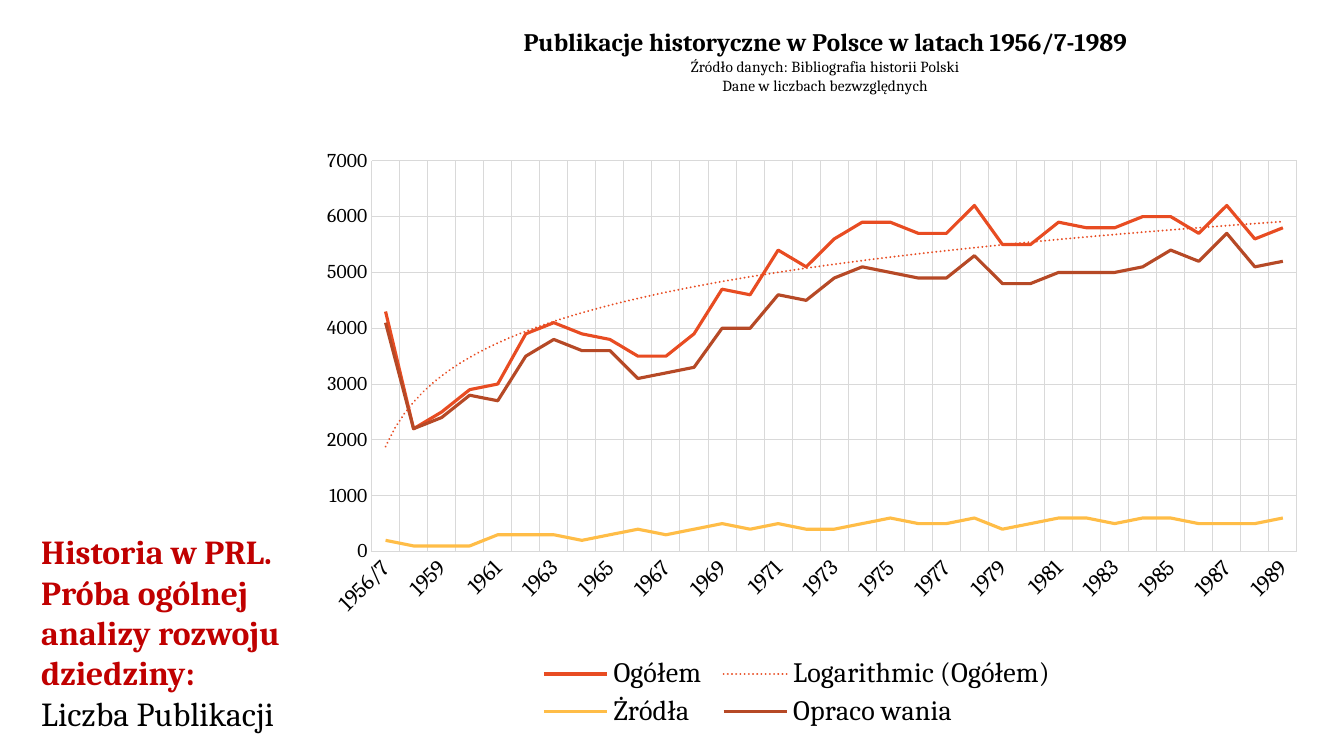
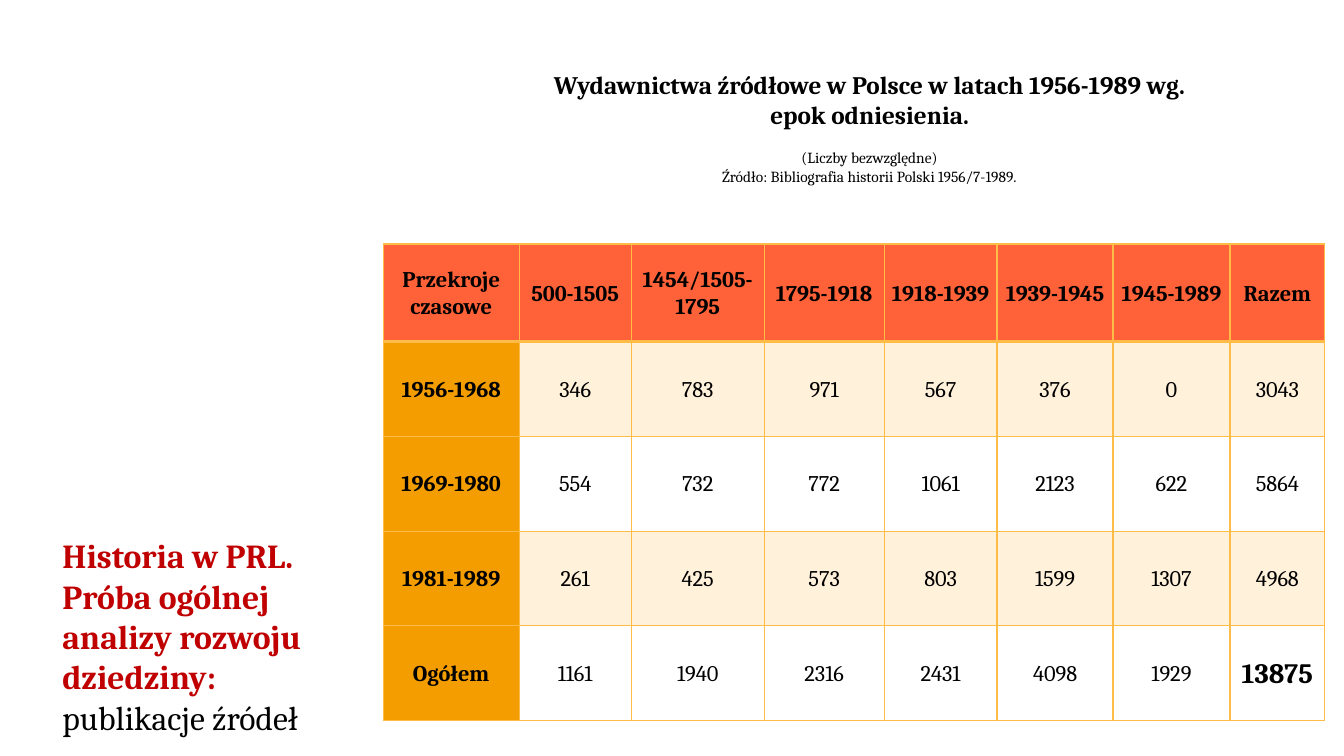
from lxml import etree
from pptx import Presentation
from pptx import util as u
from pptx.chart.data import CategoryChartData
from pptx.dml.color import RGBColor
from pptx.enum import chart as ch, text as tx
from pptx.oxml import parse_xml
from pptx.oxml.ns import nsdecls, qn

FONT = "Cambria"
INK = {"text": "000000", "head": "C00000", "grid": "D9D9D9", "all": "E84C22",
       "gold": "FFBD47", "works": "B64926", "top": "FF6238", "side": "F49D00"}
THEME = "Historia w PRL. Próba ogólnej analizy rozwoju dziedziny: "

YEARS = ["1956/7"] + [str(y) for y in range(1958, 1990)]
SERIES = [
    ("Ogółem", "all", [
        4300, 2200, 2500, 2900, 3000, 3900, 4100, 3900, 3800, 3500, 3500,
        3900, 4700, 4600, 5400, 5100, 5600, 5900, 5900, 5700, 5700, 6200,
        5500, 5500, 5900, 5800, 5800, 6000, 6000, 5700, 6200, 5600, 5800]),
    ("Żródła", "gold", [
        200, 100, 100, 100, 300, 300, 300, 200, 300, 400, 300,
        400, 500, 400, 500, 400, 400, 500, 600, 500, 500, 600,
        400, 500, 600, 600, 500, 600, 600, 500, 500, 500, 600]),
    ("Opraco wania", "works", [
        4100, 2200, 2400, 2800, 2700, 3500, 3800, 3600, 3600, 3100, 3200,
        3300, 4000, 4000, 4600, 4500, 4900, 5100, 5000, 4900, 4900, 5300,
        4800, 4800, 5000, 5000, 5000, 5100, 5400, 5200, 5700, 5100, 5200]),
]
# Each title line: text, size, bold, space before
CHART_TITLE = [
    ("Publikacje historyczne w Polsce w latach 1956/7-1989", 18, True, 0),
    ("Źródło danych: Bibliografia historii Polski", 11, False, 0),
    ("Dane w liczbach bezwzględnych", 11, False, 0),
]
TABLE_TITLE = [
    ("Wydawnictwa źródłowe w Polsce w latach 1956-1989 wg. epok odniesienia.",
     18, True, 0),
    ("(Liczby bezwzględne)", 11, False, 13),
    ("Źródło: Bibliografia historii Polski 1956/7-1989.", 11, False, 0),
]
ROWS = [
    ["Przekroje czasowe", "500-1505", "1454/1505- 1795", "1795-1918",
     "1918-1939", "1939-1945", "1945-1989", "Razem"],
    ["1956-1968", 346, 783, 971, 567, 376, 0, 3043],
    ["1969-1980", 554, 732, 772, 1061, 2123, 622, 5864],
    ["1981-1989", 261, 425, 573, 803, 1599, 1307, 4968],
    ["Ogółem", 1161, 1940, 2316, 2431, 4098, 1929, 13875],
]
WIDTHS = [1.35, 1.11, 1.32, 1.19, 1.12, 1.15, 1.16, 0.94]
HEIGHTS = [0.97] + [0.94] * 4


def inches(*sizes):
    return [u.Inches(s) for s in sizes]


def rgb(name):
    return RGBColor.from_string(INK[name])


def style(font, size, ink="text", bold=False):
    font.name, font.size, font.bold = FONT, u.Pt(size), bold
    font.color.rgb = rgb(ink)


def stroke(line, ink, width):
    line.color.rgb = rgb(ink)
    line.width = u.Pt(width)


def add_box(slide, *place):
    frame = slide.shapes.add_textbox(*inches(*place)).text_frame
    frame.word_wrap = True
    frame.auto_size = tx.MSO_AUTO_SIZE.SHAPE_TO_FIT_TEXT
    return frame


def add_theme(slide, place, topic, split=False):
    """Red heading shared by the slides, followed by the slide's own topic."""
    para = add_box(slide, *place).paragraphs[0]
    for words, ink, bold in ((THEME, "head", True), (topic, "text", False)):
        if split and words == topic:
            para.add_line_break()
        run = para.add_run()
        run.text = words
        style(run.font, 24, ink, bold)


def fill_title(frame, lines):
    frame.text = "\n".join(line[0] for line in lines)
    for para, (_, size, bold, gap) in zip(frame.paragraphs, lines):
        para.alignment = tx.PP_ALIGN.CENTER
        if gap:
            para.space_before = u.Pt(gap)
        style(para.runs[0].font, size, bold=bold)


def lay_out(part, spot, x, y, w=None, h=None, inner=False):
    """Place a chart part by shares of the chart's size."""
    for old in part.findall(qn("c:layout")):
        part.remove(old)
    target = '<c:layoutTarget val="inner"/>' if inner else ""
    modes = '<c:xMode val="edge"/><c:yMode val="edge"/>'
    sizes = "".join(f'<c:{k} val="{v}"/>' for k, v in
                    zip("xywh", (x, y, w, h)) if v is not None)
    part.insert(spot, parse_xml(
        f'<c:layout {nsdecls("c")}><c:manualLayout>{target}{modes}{sizes}'
        '</c:manualLayout></c:layout>'))


def add_trend(series, name, ink):
    trend = parse_xml(
        f'<c:trendline {nsdecls("c", "a")}><c:name>{name}</c:name><c:spPr>'
        f'<a:ln w="{u.Pt(1.5)}" cap="rnd"><a:solidFill>'
        f'<a:srgbClr val="{INK[ink]}"/></a:solidFill>'
        '<a:prstDash val="sysDot"/></a:ln></c:spPr>'
        '<c:trendlineType val="log"/><c:dispRSqr val="0"/>'
        '<c:dispEq val="0"/></c:trendline>')
    series._element.find(qn("c:cat")).addprevious(trend)


def add_graph(slide):
    data = CategoryChartData()
    data.categories = YEARS
    for name, _, values in SERIES:
        data.add_series(name, values)
    chart = slide.shapes.add_chart(
        ch.XL_CHART_TYPE.LINE, *inches(2.63, 0.16, 10.55, 7.18), data).chart
    style(chart.font, 10)

    for line, (_, ink, _) in zip(chart.plots[0].series, SERIES):
        line.smooth = False
        line.marker.style = ch.XL_MARKER_STYLE.NONE
        stroke(line.format.line, ink, 2.25)
    add_trend(chart.plots[0].series[0], "Logarithmic (Ogółem)", "all")

    for axis, size in ((chart.category_axis, 16), (chart.value_axis, 14)):
        style(axis.tick_labels.font, size)
        axis.major_tick_mark = axis.minor_tick_mark = ch.XL_TICK_MARK.NONE
        axis.has_major_gridlines = True
        stroke(axis.major_gridlines.format.line, "grid", 0.75)
    stroke(chart.category_axis.format.line, "grid", 0.75)
    turn = chart.category_axis._element.find(qn("c:txPr")).find(qn("a:bodyPr"))
    turn.set("rot", str(-45 * 60000))
    scale = chart.value_axis
    scale.minimum_scale, scale.maximum_scale, scale.major_unit = 0, 7000, 1000
    scale.format.line.fill.background()

    chart.has_title = chart.has_legend = True
    fill_title(chart.chart_title.text_frame, CHART_TITLE)
    legend = chart.legend
    legend.position = ch.XL_LEGEND_POSITION.BOTTOM
    legend.include_in_layout = False
    style(legend.font, 20)
    lay_out(chart.chart_title._element, 1, 0.24, 0.01)
    lay_out(legend._element, 1, 0.25, 0.88, 0.5, 0.11)
    lay_out(chart._chartSpace.chart.plotArea, 0, 0.1, 0.2, 0.87, 0.54, True)


def add_edges(cell, head):
    props = cell._tc.get_or_add_tcPr()
    for spot, side in enumerate("LRTB"):
        width = u.Pt(2 if head and side == "B" else 1)
        props.insert(spot, parse_xml(
            f'<a:ln{side} {nsdecls("a")} w="{width}"><a:solidFill>'
            f'<a:srgbClr val="{INK["gold"]}"/></a:solidFill></a:ln{side}>'))


def paint(cell, row, col):
    """Header row and column are solid, odd rows are tinted."""
    if row and col and row % 2 == 0:
        cell.fill.background()
        return
    cell.fill.solid()
    cell.fill.fore_color.rgb = rgb(
        "top" if row == 0 else "side" if col == 0 else "gold")
    if row and col:
        shade = cell._tc.tcPr.find(".//" + qn("a:srgbClr"))
        etree.SubElement(shade, qn("a:alpha")).set("val", "20000")


def add_grid(slide):
    table = slide.shapes.add_table(
        len(ROWS), len(WIDTHS),
        *inches(3.8, 2.42, sum(WIDTHS), sum(HEIGHTS))).table
    table.first_row = table.horz_banding = False
    for col, width in zip(table.columns, WIDTHS):
        col.width = u.Inches(width)
    for row, height in zip(table.rows, HEIGHTS):
        row.height = u.Inches(height)
    for r, row in enumerate(ROWS):
        for c, value in enumerate(row):
            cell = table.cell(r, c)
            total = r == len(ROWS) - 1 and c == len(WIDTHS) - 1
            cell.text = str(value)
            cell.vertical_anchor = tx.MSO_ANCHOR.MIDDLE
            cell.margin_left = cell.margin_right = u.Inches(0.05)
            cell.margin_top = cell.margin_bottom = 0
            para = cell.text_frame.paragraphs[0]
            para.alignment = tx.PP_ALIGN.CENTER
            para.line_spacing = 1.07
            style(para.runs[0].font, 20 if total else 16,
                  bold=r == 0 or c == 0 or total)
            paint(cell, r, c)
            add_edges(cell, r == 0)


def main():
    deck = Presentation()
    deck.slide_width, deck.slide_height = inches(13.33, 7.5)
    blank = deck.slide_layouts[6]

    slide = deck.slides.add_slide(blank)
    add_graph(slide)
    add_theme(slide, (0.31, 5.22, 3.05, 2.12), "Liczba Publikacji", split=True)

    slide = deck.slides.add_slide(blank)
    add_theme(slide, (0.52, 5.26, 3.02, 2.12), "publikacje źródeł")
    add_grid(slide)
    fill_title(add_box(slide, 5.29, 0.64, 6.67, 1.63), TABLE_TITLE)

    deck.save("out.pptx")


if __name__ == "__main__":
    main()
